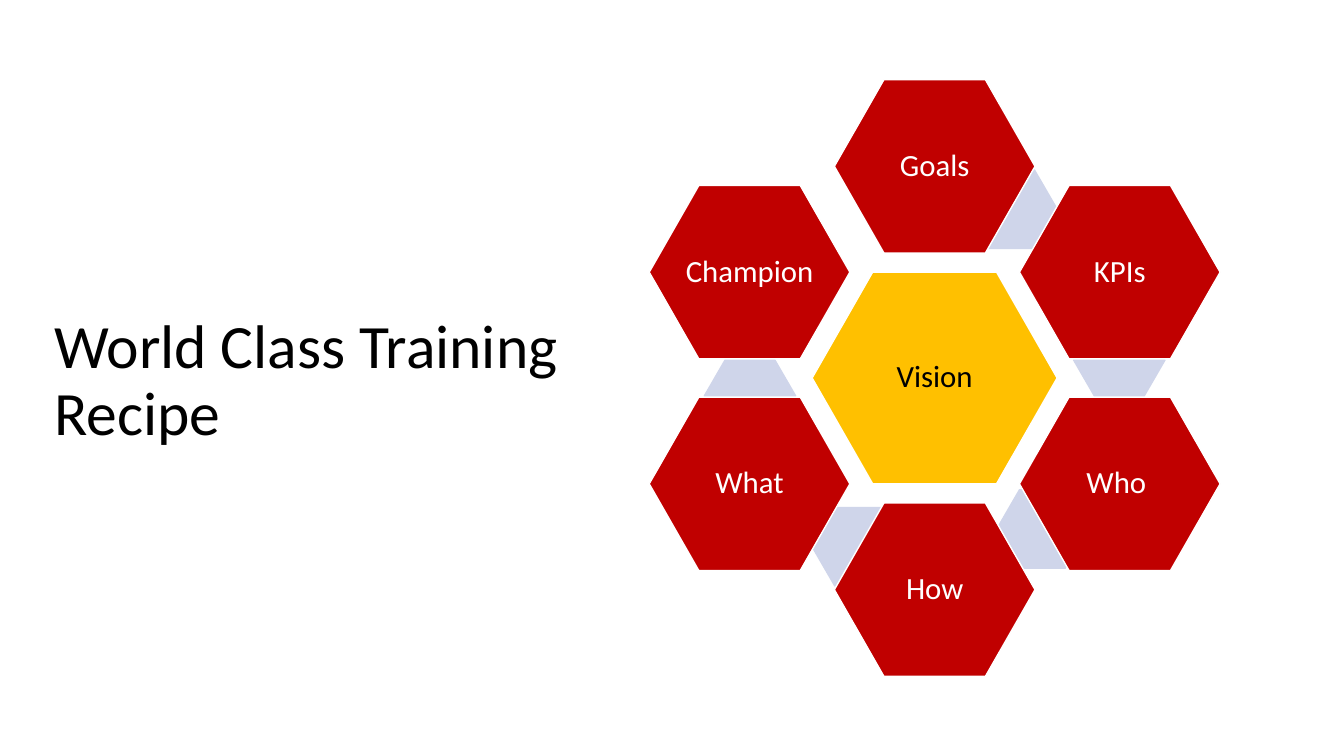
from math import cos, radians, sin

from pptx import Presentation
from pptx.dml.color import RGBColor
from pptx.enum.shapes import MSO_SHAPE as Shape
from pptx.enum.text import MSO_ANCHOR as Anchor, MSO_AUTO_SIZE as AutoSize, PP_ALIGN as Align
from pptx.util import Inches, Pt

CENTER_X, CENTER_Y = 9.27, 3.75
STEP = 60  # degrees between neighbours on the ring
INGREDIENTS = ["Goals", "KPIs", "Who ", "How", "What", "Champion"]


def color(value):
    return RGBColor.from_string(value)


class RecipeSlide:
    font = "Calibri"
    red, gold, pale = "C00000", "FFC000", "CFD5EA"
    black, white = "000000", "FFFFFF"

    def __init__(self, deck):
        self.slide = deck.slides.add_slide(deck.slide_layouts[5])

    def label(self, frame, text, size, ink, align, anchor, inset):
        margins = {f"margin_{side}": Inches(inset)
                   for side in ("left", "right", "top", "bottom")}
        settings = {"word_wrap": True, "auto_size": AutoSize.NONE,
                    "vertical_anchor": anchor, **margins}
        for name, value in settings.items():
            setattr(frame, name, value)
        line = frame.paragraphs[0]
        line.alignment, line.line_spacing = align, 0.9
        run = line.add_run()
        run.text = text
        for name, value in {"name": self.font, "size": Pt(size)}.items():
            setattr(run.font, name, value)
        run.font.color.rgb = color(ink)

    def title(self, text, left, top, width, height):
        heading = self.slide.shapes.title
        place = {"left": left, "top": top, "width": width, "height": height}
        for name, value in place.items():
            setattr(heading, name, Inches(value))
        self.label(heading.text_frame, text, 44, self.black, Align.LEFT, Anchor.TOP, 0.13)

    def hexagon(self, x, y, width, height, fill, text="", ink=white, corner=0.286):
        """Draw a hexagon centred on x, y; only labelled ones are outlined."""
        cell = self.slide.shapes.add_shape(
            Shape.HEXAGON, Inches(x - width / 2), Inches(y - height / 2),
            Inches(width), Inches(height))
        cell.adjustments[0], cell.adjustments[1] = corner, 1.1547
        cell.shadow.inherit = False
        cell.fill.solid()
        cell.fill.fore_color.rgb = color(fill)
        if text:
            cell.line.color.rgb = color(self.white)
            cell.line.width = Pt(1)
            self.label(cell.text_frame, text, 22, ink, Align.CENTER, Anchor.MIDDLE, 0.03)
        else:
            cell.line.fill.background()


def ring(start, count, radius_x, radius_y):
    """Yield centres clockwise from the start angle."""
    for i in range(count):
        angle = radians(start + STEP * i)
        yield CENTER_X + radius_x * cos(angle), CENTER_Y + radius_y * sin(angle)


def main():
    deck = Presentation()
    deck.slide_width, deck.slide_height = Inches(13.33), Inches(7.5)
    recipe = RecipeSlide(deck)

    # Title
    recipe.title("World Class Training Recipe", 0.41, 3, 5.4, 1.45)

    # Vision in the middle
    recipe.hexagon(CENTER_X, CENTER_Y, 2.43, 2.1, recipe.gold, "Vision", recipe.black)

    # Pale links between neighbouring ingredients
    for x, y in ring(-65.5, len(INGREDIENTS) - 1, 1.84, 1.84):
        recipe.hexagon(x, y, 0.92, 0.79, recipe.pale, corner=0.289)

    # Ring of ingredients, from the top
    centers = ring(-90, len(INGREDIENTS), 2.12, 2.1)
    for ingredient, (x, y) in zip(INGREDIENTS, centers):
        recipe.hexagon(x, y, 1.99, 1.72, recipe.red, ingredient)

    deck.save("out.pptx")


if __name__ == "__main__":
    main()
